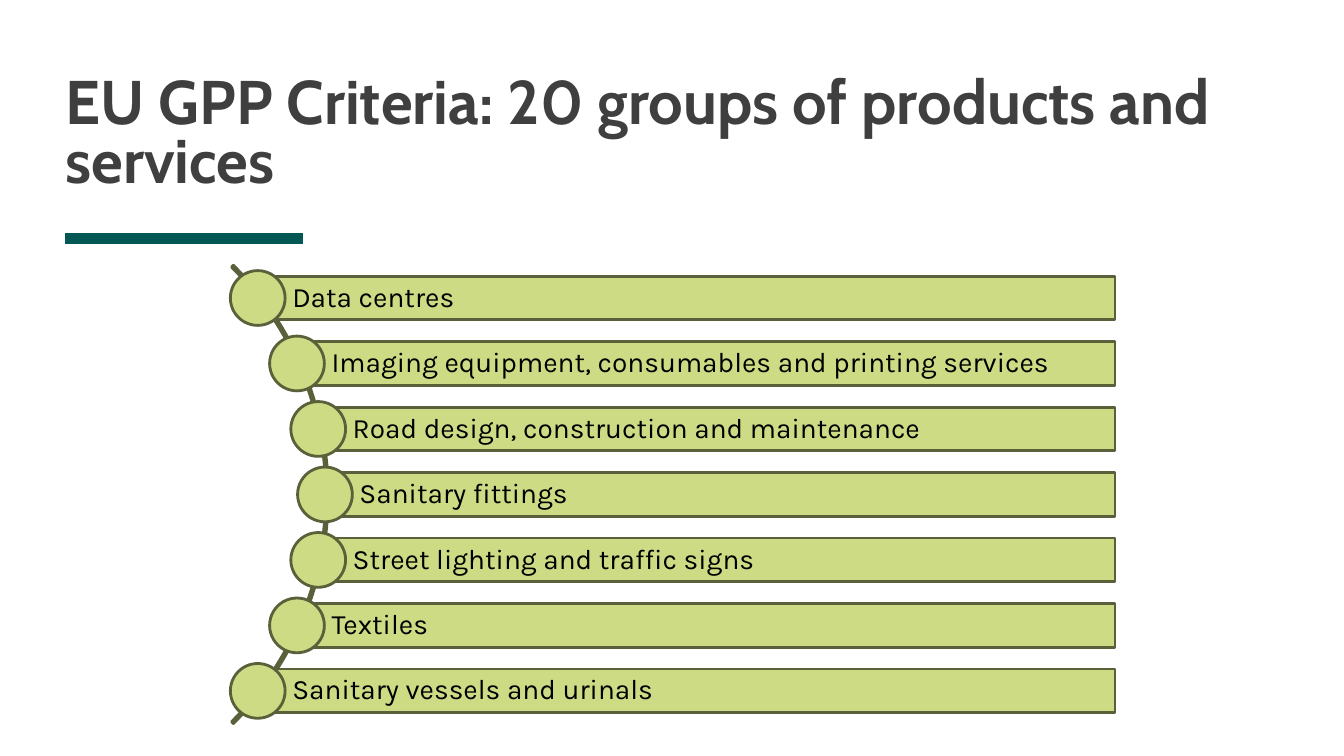
import math
from pptx import Presentation, util as u
from pptx.dml import color
from pptx.enum import shapes, text
from pptx.oxml import xmlchemy, ns
from lxml import etree

TITLE = "EU GPP Criteria: 20 groups of products and services"
GROUPS = [
    "Data centres",
    "Imaging equipment, consumables and printing services",
    "Road design, construction and maintenance",
    "Sanitary fittings",
    "Street lighting and traffic signs",
    "Textiles",
    "Sanitary vessels and urinals",
]
COLOURS = {"title": "3F3F3F", "rule": "035854", "fill": "CCDB84",
           "outline": "59603A", "label": "000000"}
TITLE_FONT = {"name": "Cabin", "size": u.Pt(44), "bold": True}
LABEL_FONT = {"name": "Karla", "size": u.Pt(20), "bold": False}
TITLE_FRAME = {"margin_left": 0, "margin_top": 0, "margin_right": 0, "margin_bottom": 0,
               "word_wrap": True, "vertical_anchor": text.MSO_ANCHOR.BOTTOM}
LABEL_FRAME = {"margin_left": u.Cm(0.87), "margin_top": u.Cm(0.15),
               "margin_right": u.Cm(0.15), "margin_bottom": u.Cm(0.15),
               "word_wrap": True, "vertical_anchor": text.MSO_ANCHOR.MIDDLE}

ARC_X, ARC_Y, ARC_SIZE = 0.11, 12.46, 16.33
ARC_ADJUSTMENTS = [189, 27, 0.004]
CURVE_RADIUS, PITCH = 8.08, 1.65
BAR_RIGHT, BAR_HEIGHT, DOT_SIZE = 28.1, 1.1, 1.38


def paint(target, name):
    target.rgb = color.RGBColor.from_string(COLOURS[name])


def apply(target, values):
    for key, value in values.items():
        setattr(target, key, value)


def write(shape, words, frame_values, font_values, colour, spacing):
    frame = shape.text_frame
    apply(frame, frame_values)
    paragraph = frame.paragraphs[0]
    apply(paragraph, {"alignment": text.PP_ALIGN.LEFT, "line_spacing": spacing})
    run = paragraph.add_run()
    run.text = words
    apply(run.font, font_values)
    paint(run.font.color, colour)


def draw(slide, kind, left, top, width, height):
    shape = slide.shapes.add_shape(kind, u.Cm(left), u.Cm(top), u.Cm(width), u.Cm(height))
    shape.shadow.inherit = False
    shape.fill.solid()
    paint(shape.fill.fore_color, "fill")
    paint(shape.line.color, "outline")
    shape.line.width = u.Pt(2)
    return shape


def main():
    deck = Presentation()
    apply(deck, {"slide_width": u.Cm(33.87), "slide_height": u.Cm(19.05)})
    slide = deck.slides.add_slide(deck.slide_layouts[6])

    rule = slide.shapes.add_connector(shapes.MSO_CONNECTOR.STRAIGHT,
                                      u.Cm(1.65), u.Cm(6.02), u.Cm(7.63), u.Cm(6.02))
    paint(rule.line.color, "rule")
    rule.line.width = u.Pt(8)
    etree.SubElement(rule._element.spPr, ns.qn("a:effectLst"))

    heading = slide.shapes.add_textbox(u.Cm(1.65), u.Cm(0.56), u.Cm(30.48), u.Cm(4.37))
    write(heading, TITLE, TITLE_FRAME, TITLE_FONT, "title", 0.8)

    kinds = shapes.MSO_SHAPE
    arc = draw(slide, kinds.BLOCK_ARC, ARC_X - ARC_SIZE / 2, ARC_Y - ARC_SIZE / 2,
               ARC_SIZE, ARC_SIZE)
    for index, value in enumerate(ARC_ADJUSTMENTS):
        arc.adjustments[index] = value

    for index, group in enumerate(GROUPS):
        offset = (index - (len(GROUPS) - 1) / 2) * PITCH
        x = ARC_X + math.sqrt(CURVE_RADIUS ** 2 - offset ** 2)
        y = ARC_Y + offset
        bar = draw(slide, kinds.RECTANGLE, x, y - BAR_HEIGHT / 2, BAR_RIGHT - x, BAR_HEIGHT)
        write(bar, group, LABEL_FRAME, LABEL_FONT, "label", 0.9)
        draw(slide, kinds.OVAL, x - DOT_SIZE / 2, y - DOT_SIZE / 2, DOT_SIZE, DOT_SIZE)

    deck.save("out.pptx")


if __name__ == "__main__":
    main()
